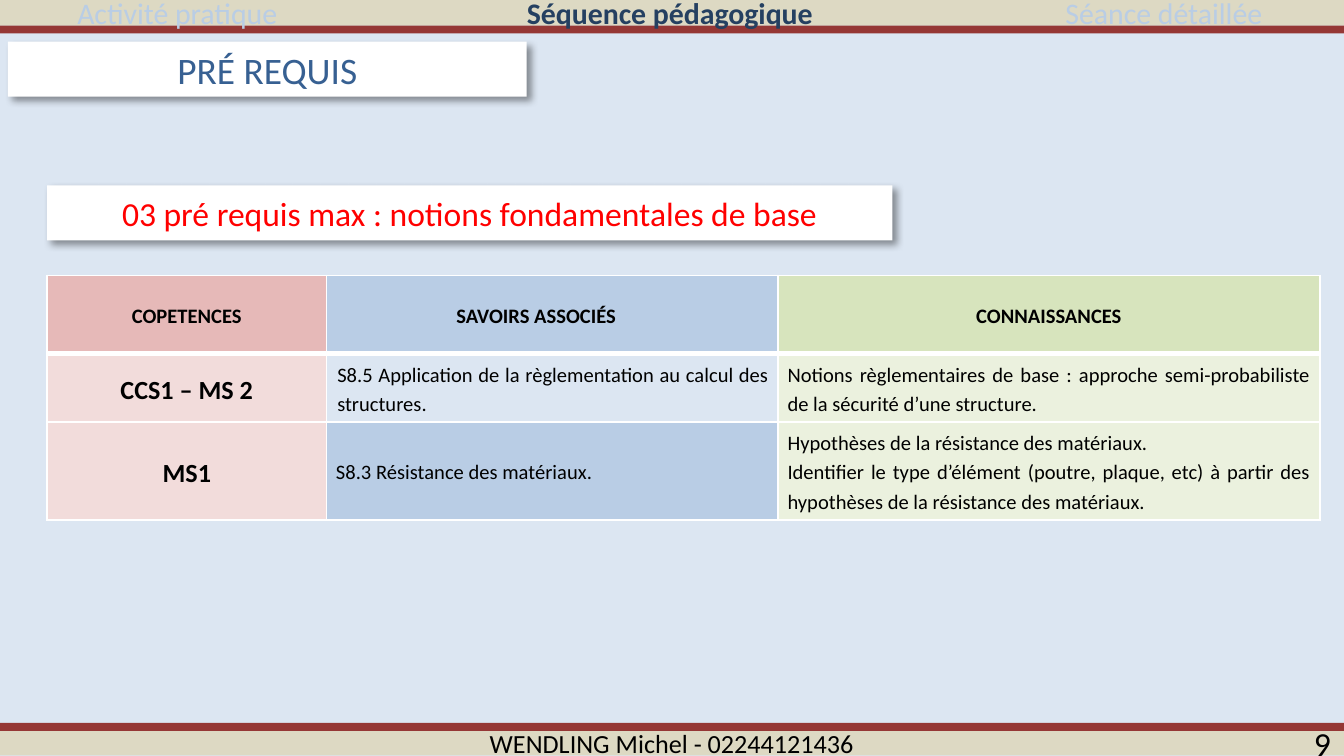
from dataclasses import dataclass

from lxml import etree
from pptx import Presentation
from pptx import util as u
from pptx.dml.color import RGBColor
from pptx.enum import shapes, text
from pptx.oxml import parse_xml
from pptx.oxml.ns import qn

PX = 9144  # EMU per px, 100 px to the inch
FONT = "Calibri"
NAMESPACE = 'xmlns:a="http://schemas.openxmlformats.org/drawingml/2006/main"'
CENTER, RIGHT, JUSTIFY = (
    text.PP_ALIGN.CENTER, text.PP_ALIGN.RIGHT, text.PP_ALIGN.JUSTIFY)
MIDDLE = text.MSO_ANCHOR.MIDDLE


@dataclass
class Box:
    left: int
    top: int
    width: int
    height: int

    def emu(self) -> list[int]:
        return [px(n) for n in (self.left, self.top, self.width, self.height)]


@dataclass
class Label:
    box: Box
    words: str
    size: int
    color: str = "000000"
    bold: bool = False
    align: int = CENTER


@dataclass
class Cell:
    lines: list[str]
    fill: str
    size: int = 11
    bold: bool = False
    align: int = CENTER
    indent: int = 0
    right_indent: int = 0


def px(length: int) -> int:
    return length * PX


def rgb(color: str) -> RGBColor:
    return RGBColor.from_string(color)


def style(paragraph, words: str, size: int, color: str, bold: bool, align) -> None:
    paragraph.text = words
    paragraph.alignment = align
    font = paragraph.font
    font.name, font.size, font.bold = FONT, u.Pt(size), bold
    font.color.rgb = rgb(color)


def add_rectangle(slide, box: Box, fill: str):
    shape = slide.shapes.add_shape(shapes.MSO_SHAPE.RECTANGLE, *box.emu())
    shape.shadow.inherit = False
    shape.fill.solid()
    shape.fill.fore_color.rgb = rgb(fill)
    shape.line.fill.background()
    return shape


def add_label(slide, label: Label) -> None:
    shape = slide.shapes.add_textbox(*label.box.emu())
    shape.text_frame.word_wrap = True
    style(shape.text_frame.paragraphs[0], label.words, label.size,
          label.color, label.bold, label.align)


def add_card(slide, label: Label) -> None:
    """White panel with a soft shadow falling to the lower right."""
    shape = add_rectangle(slide, label.box, "FFFFFF")
    effects = shape.element.spPr.find(qn("a:effectLst"))
    effects.append(parse_xml(
        f'<a:outerShdw {NAMESPACE} blurRad="{u.Pt(4)}" dist="{u.Pt(3)}" '
        'dir="2700000" algn="tl" rotWithShape="0"><a:srgbClr val="000000">'
        '<a:alpha val="40000"/></a:srgbClr></a:outerShdw>'))
    shape.text_frame.vertical_anchor = MIDDLE
    style(shape.text_frame.paragraphs[0], label.words, label.size,
          label.color, label.bold, label.align)


def set_borders(cell, top: int, bottom: int) -> None:
    properties = cell._tc.get_or_add_tcPr()
    widths = {"lnL": 1, "lnR": 1, "lnT": top, "lnB": bottom}
    for index, (side, width) in enumerate(widths.items()):
        line = etree.Element(qn(f"a:{side}"), w=str(u.Pt(width)))
        fill = etree.SubElement(line, qn("a:solidFill"))
        etree.SubElement(fill, qn("a:srgbClr"), val="FFFFFF")
        properties.insert(index, line)


def fill_cell(cell, content: Cell, top: int, bottom: int) -> None:
    cell.fill.solid()
    cell.fill.fore_color.rgb = rgb(content.fill)
    cell.vertical_anchor = MIDDLE
    cell.margin_left = cell.margin_right = px(7)
    cell.margin_top = cell.margin_bottom = 0
    for index, words in enumerate(content.lines):
        frame = cell.text_frame
        paragraph = frame.add_paragraph() if index else frame.paragraphs[0]
        style(paragraph, words, content.size, "000000", content.bold, content.align)
        paragraph.line_spacing = 1.15
        properties = paragraph._p.get_or_add_pPr()
        properties.set("marL", str(px(content.indent)))
        properties.set("marR", str(px(content.right_indent)))
    set_borders(cell, top, bottom)


def add_grid(slide, box: Box, columns: list[int], heights: list[int],
             rows: list[list[Cell]]) -> None:
    table = slide.shapes.add_table(len(rows), len(columns), *box.emu()).table
    table.horz_banding = False
    for column, width in zip(table.columns, columns):
        column.width = px(width)
    for index, (row, height) in enumerate(zip(rows, heights)):
        table.rows[index].height = px(height)
        for cell, content in zip(table.rows[index].cells, row):
            fill_cell(cell, content, top=3 if index == 1 else 1,
                      bottom=3 if index == 0 else 1)


BANDS = [
    (Box(0, 0, 1000, 19), "DDD9C3"),
    (Box(0, 543, 1000, 19), "DDD9C3"),
    (Box(0, 19, 1000, 6), "953735"),
    (Box(0, 538, 1000, 6), "953735"),
]
LABELS = [
    Label(Box(915, 533, 85, 30), "9", 18, align=RIGHT),
    Label(Box(0, -9, 264, 37), "Activité pratique", 16, "B9CDE5"),
    Label(Box(340, -9, 317, 37), "Séquence pédagogique", 16, "254061", True),
    Label(Box(732, -9, 268, 37), "Séance détaillée", 16, "B9CDE5"),
    Label(Box(0, 536, 1000, 30), "WENDLING Michel - 02244121436", 14),
]
CARDS = [
    Label(Box(35, 138, 629, 41),
          "03 pré requis max : notions fondamentales de base", 18, "FF0000"),
    Label(Box(6, 31, 386, 41), "PRÉ REQUIS", 20, "376092"),
]
ROWS = [
    [Cell(["COPETENCES"], "E6B9B8", bold=True),
     Cell(["SAVOIRS ASSOCIÉS"], "B9CDE5", bold=True, indent=6, right_indent=30),
     Cell(["CONNAISSANCES"], "D7E4BD", bold=True)],
    [Cell(["CCS1 – MS 2"], "F2DCDB", 14, True),
     Cell(["S8.5 Application de la règlementation au calcul des structures."],
          "DCE6F2", align=JUSTIFY, indent=1),
     Cell(["Notions règlementaires de base : approche semi-probabiliste "
           "de la sécurité d’une structure."], "EBF1DE", align=JUSTIFY)],
    [Cell(["MS1"], "F2DCDB", 14, True),
     Cell(["S8.3 Résistance des matériaux."], "B9CDE5", align=JUSTIFY),
     Cell(["Hypothèses de la résistance des matériaux.",
           "Identifier le type d’élément (poutre, plaque, etc) à partir des "
           "hypothèses de la résistance des matériaux."],
          "EBF1DE", align=JUSTIFY)],
]


def main() -> None:
    presentation = Presentation()
    presentation.slide_width = px(1000)
    presentation.slide_height = px(1000) * 9 // 16
    slide = presentation.slides.add_slide(presentation.slide_layouts[6])
    slide.background.fill.solid()
    slide.background.fill.fore_color.rgb = rgb("DCE6F2")

    # Header and footer
    for box, fill in BANDS:
        add_rectangle(slide, box, fill)
    for label in LABELS:
        add_label(slide, label)

    # Prerequisites table, then the headings
    add_grid(slide, Box(35, 205, 947, 182), [208, 336, 403], [58, 51, 73], ROWS)
    for card in CARDS:
        add_card(slide, card)

    presentation.save("out.pptx")


if __name__ == "__main__":
    main()
